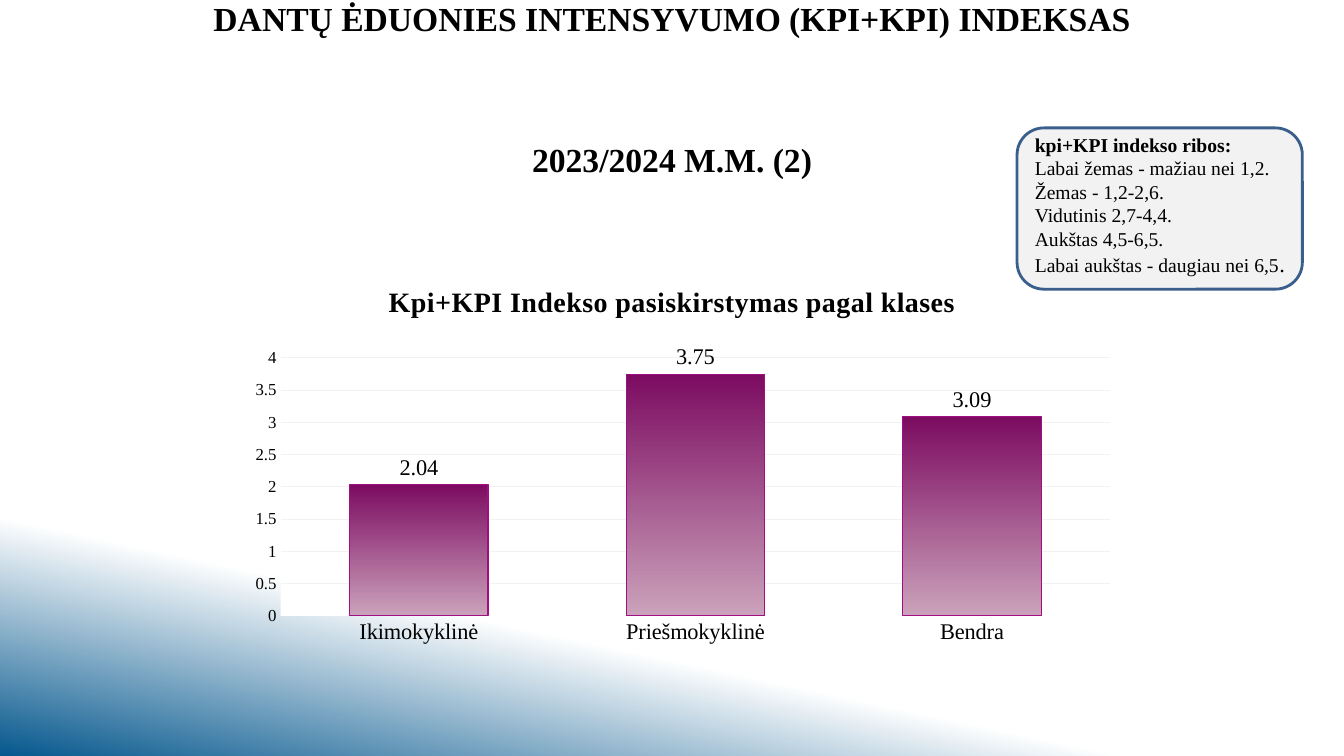
from lxml.etree import SubElement
from pptx import Presentation
from pptx.chart.data import CategoryChartData
from pptx.dml.color import RGBColor
from pptx.enum.chart import XL_CHART_TYPE, XL_LABEL_POSITION, XL_TICK_MARK
from pptx.enum.shapes import MSO_CONNECTOR, MSO_SHAPE
from pptx.enum.text import MSO_ANCHOR, PP_ALIGN
from pptx.oxml import parse_xml
from pptx.oxml.ns import nsdecls, qn
from pptx.util import Pt

FONT = "Times New Roman"


def color(value):
    return RGBColor.from_string(value)


def set_font(font, size, bold=False):
    font.name, font.size, font.bold = FONT, Pt(size), bold
    font.color.rgb = color("000000")


def add_run(p, text, size, bold=False):
    r = p.add_run()
    r.text = text
    set_font(r.font, size, bold)
    return r


def set_line(line, value, width):
    line.color.rgb = color(value)
    line.width = Pt(width)


def set_gradient(fill, angle, stops):
    fill.gradient()
    fill.gradient_angle = angle
    for stop, (position, value) in zip(fill.gradient_stops, stops):
        stop.position = position
        stop.color.rgb = color(value)


def add_diagonal(s, top, length, width):
    line = s.shapes.add_connector(MSO_CONNECTOR.STRAIGHT, Pt(960), Pt(top),
                                  Pt(960 - length), Pt(top + length))
    set_line(line.line, "FFFFFF", width)
    SubElement(line._element.spPr, qn("a:effectLst"))


def add_title(s, lines):
    tf = s.shapes.add_textbox(Pt(144), Pt(21.6), Pt(672), Pt(84.24)).text_frame
    tf.word_wrap = True
    tf.vertical_anchor = MSO_ANCHOR.MIDDLE
    tf.margin_bottom = Pt(33.6)
    p = tf.paragraphs[0]
    p.alignment = PP_ALIGN.CENTER
    p.line_spacing = 2.0
    for i, line in enumerate(lines):
        if i:
            p.add_line_break()
        add_run(p, line, 24, True)


def add_legend_box(s, heading, ranges):
    sp = s.shapes.add_shape(MSO_SHAPE.ROUNDED_RECTANGLE, Pt(726.5), Pt(91.4), Pt(203.8), Pt(115.2))
    sp.shadow.inherit = False
    sp.fill.solid()
    sp.fill.fore_color.rgb = color("F2F2F2")
    set_line(sp.line, "3A5F8C", 2)
    tf = sp.text_frame
    tf.word_wrap = True
    tf.vertical_anchor = MSO_ANCHOR.MIDDLE
    tf.margin_right = tf.margin_top = 0
    tf.margin_bottom = Pt(5)
    for i, text in enumerate([heading] + ranges):
        p = tf.add_paragraph() if i else tf.paragraphs[0]
        p.alignment = PP_ALIGN.LEFT
        add_run(p, text, 14, i == 0)
    add_run(p, ".", 16)


def style_axis(axis, size):
    axis.major_tick_mark = axis.minor_tick_mark = XL_TICK_MARK.NONE
    set_font(axis.tick_labels.font, size)


def style_plot_area(chart, x, y, w, h):
    area = chart._chartSpace.chart.plotArea
    for old in area.findall(qn("c:layout")):
        area.remove(old)
    layout = parse_xml(f"<c:layout {nsdecls('c')}/>")
    manual = SubElement(layout, qn("c:manualLayout"))
    settings = dict(layoutTarget="inner", xMode="edge", yMode="edge", x=x, y=y, w=w, h=h)
    for tag, value in settings.items():
        SubElement(manual, qn(f"c:{tag}")).set("val", str(value))
    area.insert(0, layout)
    area.append(parse_xml(
        f'<c:spPr {nsdecls("c", "a")}><a:solidFill><a:srgbClr val="FFFFFF"/></a:solidFill></c:spPr>'))


def add_column_chart(s, title, values):
    data = CategoryChartData()
    data.categories = values.keys()
    data.add_series("Series 1", values.values())
    chart = s.shapes.add_chart(XL_CHART_TYPE.COLUMN_CLUSTERED, Pt(144), Pt(190),
                               Pt(672), Pt(284.4), data).chart
    chart.has_legend = False
    set_font(chart.font, 10)
    chart.has_title = True
    r = add_run(chart.chart_title.text_frame.paragraphs[0], title, 20, True)
    r.font._element.set("spc", "20")
    style_plot_area(chart, 0.084, 0.231, 0.882, 0.648)

    style_axis(chart.category_axis, 16)
    set_line(chart.category_axis.format.line, "FFFFFF", 0.75)
    axis = chart.value_axis
    style_axis(axis, 12)
    axis.minimum_scale, axis.maximum_scale, axis.major_unit = 0, 4, 0.5
    axis.format.line.fill.background()
    set_line(axis.major_gridlines.format.line, "F2F2F2", 0.75)

    plot = chart.plots[0]
    plot.vary_by_categories = False
    plot.gap_width, plot.overlap = 100, -24
    plot.has_data_labels = True
    labels = plot.data_labels
    labels.show_value = True
    labels.position = XL_LABEL_POSITION.OUTSIDE_END
    set_font(labels.font, 16)
    series = plot.series[0]
    set_gradient(series.format.fill, 270, [(0, "7C0B61"), (1, "CBA2BB")])
    set_line(series.format.line, "A10E7F", 0.75)


def main():
    prs = Presentation()
    prs.slide_width, prs.slide_height = Pt(960), Pt(540)
    s = prs.slides.add_slide(prs.slide_layouts[6])
    set_gradient(s.background.fill, 258, [(0.77, "FFFFFF"), (1, "06588E")])
    for top, length, width in [(233.3, 72, 0.75), (251.3, 234.7, 0.75), (258.5, 149.4, 0.75),
                               (246.2, 137.5, 2.25), (290.2, 100, 2.25)]:
        add_diagonal(s, top, length, width)
    add_column_chart(s, "Kpi+KPI Indekso pasiskirstymas pagal klases",
                     {"Ikimokyklinė": 2.04, "Priešmokyklinė": 3.75, "Bendra": 3.09})
    add_legend_box(s, "kpi+KPI indekso ribos:", [
        "Labai žemas - mažiau nei 1,2.",
        "Žemas - 1,2-2,6.",
        "Vidutinis 2,7-4,4.",
        "Aukštas 4,5-6,5.",
        "Labai aukštas - daugiau nei 6,5",
    ])
    add_title(s, ["DANTŲ ĖDUONIES INTENSYVUMO (KPI+KPI) INDEKSAS ", "2023/2024 M.M. (2)"])
    prs.save("out.pptx")


if __name__ == "__main__":
    main()
